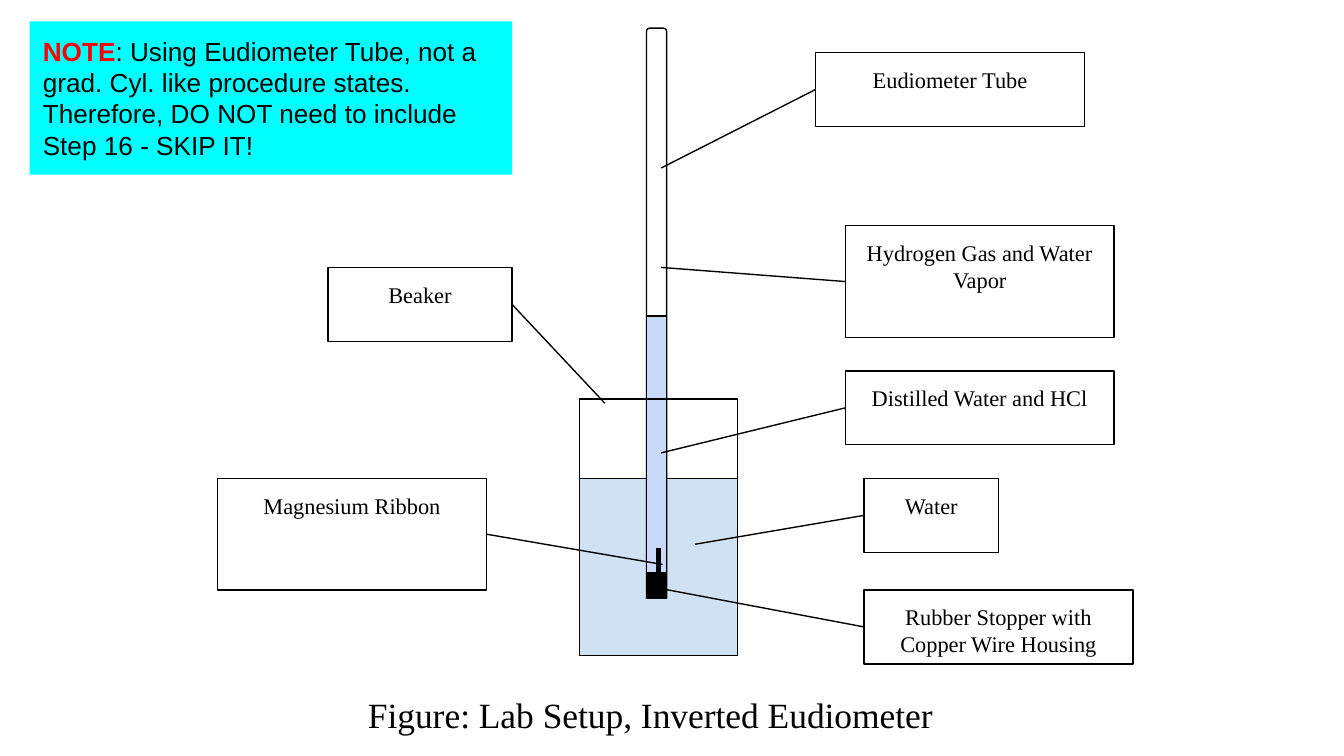
from pptx import Presentation
from pptx.dml.color import RGBColor
from pptx.enum import shapes, text
from pptx.oxml.ns import qn
from pptx.util import Inches, Pt
from lxml import etree

BLACK = RGBColor(0x00, 0x00, 0x00)
RED = RGBColor(0xFF, 0x00, 0x00)
CYAN = RGBColor(0x00, 0xFF, 0xFF)
BATH_BLUE = RGBColor(0xCF, 0xE2, 0xF3)
ACID_BLUE = RGBColor(0xC9, 0xDA, 0xF8)
RECT = shapes.MSO_SHAPE.RECTANGLE
TUBE = shapes.MSO_SHAPE.ROUND_2_SAME_RECTANGLE

prs = Presentation()
prs.slide_width = Inches(10)
prs.slide_height = prs.slide_width * 9 // 16
slide = prs.slides.add_slide(prs.slide_layouts[6])


def add_box(kind, bounds, fill=None, outline=BLACK):
    box = slide.shapes.add_shape(kind, *map(Inches, bounds))
    box.shadow.inherit = False
    if fill is None:
        box.fill.background()
    else:
        box.fill.solid()
        box.fill.fore_color.rgb = fill
    if outline is None:
        box.line.fill.background()
    else:
        box.line.color.rgb = outline
        box.line.width = Pt(0.75)
    return box


def write(box, runs, size, font, align):
    frame = box.text_frame
    layout = {"word_wrap": True, "vertical_anchor": text.MSO_ANCHOR.TOP}
    for side in ("left", "top", "right", "bottom"):
        layout[f"margin_{side}"] = Inches(0.1)
    for name, value in layout.items():
        setattr(frame, name, value)
    paragraph = frame.paragraphs[0]
    paragraph.alignment = align
    for words, color, bold in runs:
        run = paragraph.add_run()
        run.text = words
        run.font.color.rgb = color
        for name, value in {"size": Pt(size), "name": font, "bold": bold}.items():
            setattr(run.font, name, value)
    return paragraph


caption = slide.shapes.add_textbox(Inches(-0.16), Inches(5.01), Inches(10), Inches(0.96))
caption_line = write(caption, [("Figure: Lab Setup, Inverted Eudiometer", BLACK, False)],
                     19, "Times New Roman", text.PP_ALIGN.CENTER)
caption_line.line_spacing = 1.15

apparatus = [
    (RECT, (4.31, 3.56, 1.18, 1.32), BATH_BLUE),
    (TUBE, (4.81, 0.21, 0.15, 4.24), None),
    (RECT, (4.81, 4.26, 0.15, 0.19), BLACK),
    (RECT, (4.81, 2.35, 0.15, 1.91), ACID_BLUE),
    (RECT, (4.31, 2.97, 1.18, 1.91), None),
]
for kind, bounds, fill in apparatus:
    add_box(kind, bounds, fill)

magnesium = ((4.9, 4.26), (4.9, 4.08), 2.25)
strokes = [magnesium]

labels = [
    ("Hydrogen Gas and Water Vapor", (6.29, 1.68, 2, 0.83), (4.92, 1.99)),
    ("Water", (6.43, 3.56, 1, 0.55), (5.17, 4.05)),
    ("Magnesium Ribbon", (1.62, 3.56, 2, 0.83), (4.93, 4.2)),
    ("Rubber Stopper with Copper Wire Housing", (6.43, 4.39, 2, 0.55), (4.92, 4.38)),
    ("Beaker", (2.44, 1.99, 1.37, 0.55), (4.5, 3)),
    ("Eudiometer Tube", (6.07, 0.39, 2, 0.55), (4.92, 1.25)),
    ("Distilled Water and HCl", (6.29, 2.76, 2, 0.55), (4.92, 3.37)),
]
for words, bounds, target in labels:
    label = add_box(RECT, bounds)
    write(label, [(words, BLACK, False)], 12, "Times New Roman", text.PP_ALIGN.CENTER)
    left, top, width, height = bounds
    near_edge = left if left > target[0] else left + width
    strokes.append(((near_edge, top + height / 2), target, 0.75))

for start, end, weight in strokes:
    stroke = slide.shapes.add_connector(shapes.MSO_CONNECTOR.STRAIGHT, *map(Inches, start + end))
    stroke.line.color.rgb = BLACK
    stroke.line.width = Pt(weight)
    etree.SubElement(stroke._element.spPr, qn("a:effectLst"))

note = add_box(RECT, (0.22, 0.16, 3.59, 1.14), CYAN, None)
note_runs = [
    ("NOTE", RED, True),
    (": Using Eudiometer Tube, not a grad. Cyl. like procedure states. "
     "Therefore, DO NOT need to include Step 16 - SKIP IT!", BLACK, False),
]
write(note, note_runs, 14, "Arial", text.PP_ALIGN.LEFT)

prs.save("out.pptx")
